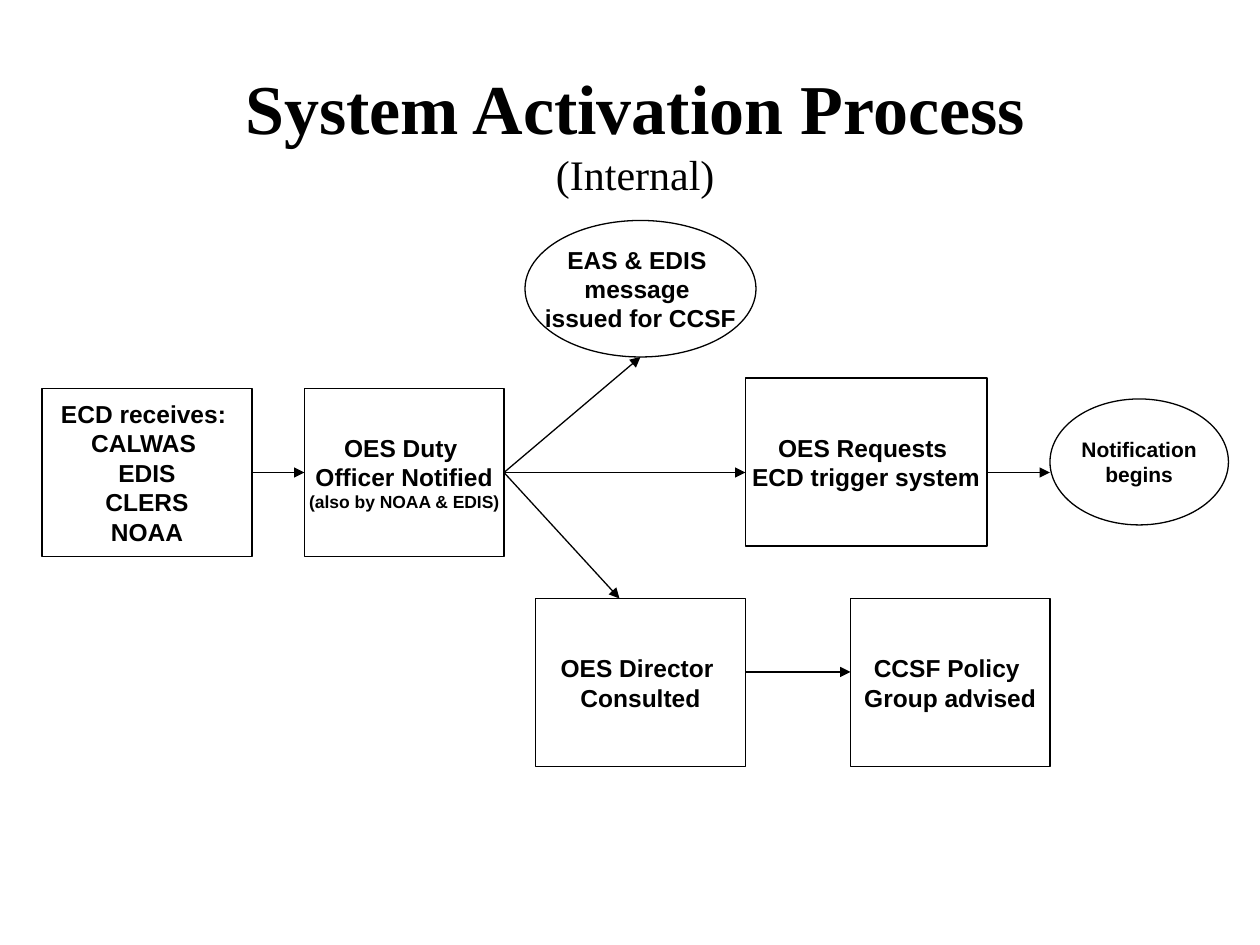
from dataclasses import dataclass

from lxml import etree
from pptx import Presentation
from pptx.dml.color import RGBColor
from pptx.enum.shapes import MSO_CONNECTOR, MSO_SHAPE
from pptx.enum.text import MSO_ANCHOR, PP_ALIGN
from pptx.oxml.ns import qn
from pptx.util import Pt

RECT, OVAL = MSO_SHAPE.RECTANGLE, MSO_SHAPE.OVAL
STRAIGHT = MSO_CONNECTOR.STRAIGHT
MIDDLE, CENTER = MSO_ANCHOR.MIDDLE, PP_ALIGN.CENTER
BLACK = "000000"
LINE_W = 0.75
BOX_H = 96


@dataclass
class Node:
    kind: int
    x: float
    y: float
    w: float
    h: float
    lines: list[str]
    size: float = 14
    note: str = ""


@dataclass
class Arrow:
    x1: float
    y1: float
    x2: float
    y2: float


NODES = [
    Node(RECT, 24, 222, 120, BOX_H,
         ["ECD receives: ", "CALWAS ", "EDIS", "CLERS", "NOAA"]),
    Node(RECT, 174, 222, 114, BOX_H, ["OES Duty ", "Officer Notified"],
         note="(also by NOAA & EDIS)"),
    Node(RECT, 306, 342, 120, BOX_H, ["OES Director ", "Consulted"]),
    Node(OVAL, 300, 126, 132, 78,
         ["EAS & EDIS ", "message ", "issued for CCSF"]),
    Node(RECT, 426, 216, 138, BOX_H, ["OES Requests ", "ECD trigger system"]),
    Node(OVAL, 600, 228, 102, 72, ["Notification", "begins"], size=12),
    Node(RECT, 486, 342, 114, BOX_H, ["CCSF Policy ", "Group advised"]),
]

ARROWS = [
    Arrow(144, 270, 174, 270),
    Arrow(288, 270, 366, 204),
    Arrow(288, 270, 354, 342),
    Arrow(426, 384, 486, 384),
    Arrow(288, 270, 426, 270),
    Arrow(564, 270, 600, 270),
]


def rgb(value: str) -> RGBColor:
    return RGBColor.from_string(value)


def add_run(p, text: str, **fmt) -> None:
    r = p.add_run()
    r.text = text
    for name, value in fmt.items():
        setattr(r.font, name, value)
    r.font.color.rgb = rgb(BLACK)


def set_line(sp) -> None:
    sp.line.color.rgb = rgb(BLACK)
    sp.line.width = Pt(LINE_W)


def add_title(s) -> None:
    tf = s.shapes.add_textbox(Pt(84), Pt(30), Pt(558), Pt(90)).text_frame
    tf.word_wrap = True
    tf.vertical_anchor = MIDDLE
    p = tf.paragraphs[0]
    p.alignment = CENTER
    font = "Times New Roman"
    add_run(p, "System Activation Process", name=font, size=Pt(40), bold=True)
    p.add_line_break()
    add_run(p, "(Internal)", name=font, size=Pt(24), bold=False)


def add_node(s, node: Node) -> None:
    sp = s.shapes.add_shape(node.kind, Pt(node.x), Pt(node.y),
                            Pt(node.w), Pt(node.h))
    sp.shadow.inherit = False
    sp.fill.background()
    set_line(sp)
    tf = sp.text_frame
    tf.word_wrap = False
    tf.vertical_anchor = MIDDLE
    rows = [(text, node.size) for text in node.lines]
    if node.note:
        rows.append((node.note, 10))
    for i, (text, size) in enumerate(rows):
        p = tf.add_paragraph() if i else tf.paragraphs[0]
        p.alignment = CENTER
        add_run(p, text, name="Arial", size=Pt(size), bold=True)


def add_arrow(s, a: Arrow) -> None:
    sp = s.shapes.add_connector(STRAIGHT, Pt(a.x1), Pt(a.y1),
                                Pt(a.x2), Pt(a.y2))
    set_line(sp)
    etree.SubElement(sp.line._get_or_add_ln(), qn("a:tailEnd"),
                     type="triangle")
    etree.SubElement(sp._element.spPr, qn("a:effectLst"))


def main() -> None:
    prs = Presentation()
    prs.slide_width, prs.slide_height = Pt(720), Pt(540)
    s = prs.slides.add_slide(prs.slide_layouts[6])

    # Heading
    add_title(s)

    # Process steps
    for node in NODES:
        add_node(s, node)

    # Flow between steps
    for arrow in ARROWS:
        add_arrow(s, arrow)

    prs.save("out.pptx")


if __name__ == "__main__":
    main()
